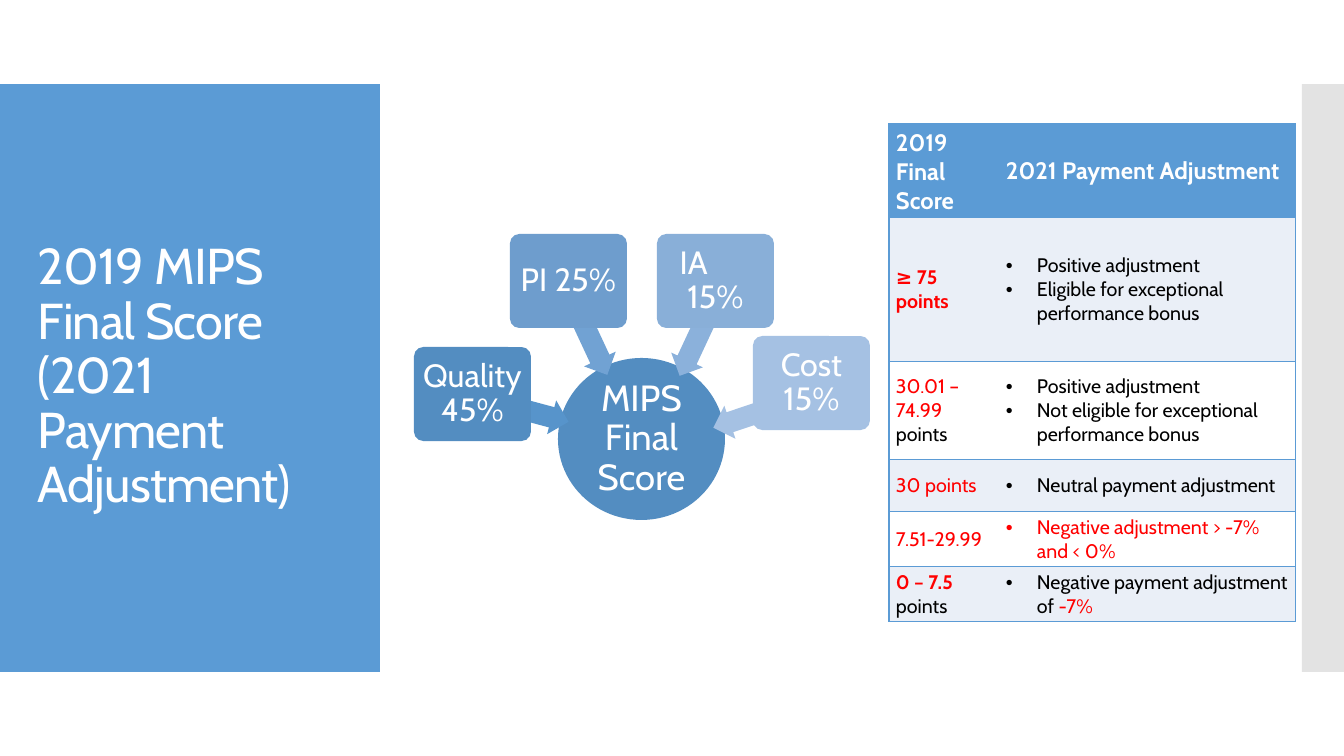
from dataclasses import dataclass
from typing import NamedTuple

from lxml.etree import SubElement
from pptx import Presentation
from pptx.dml.color import RGBColor
from pptx.enum.shapes import MSO_SHAPE
from pptx.enum.text import MSO_ANCHOR, PP_ALIGN
from pptx.oxml.ns import qn
from pptx.util import Emu, Pt

BLUE, WHITE, BLACK, RED, BAND = "5B9BD5", "FFFFFF", "000000", "FF0000", "EAEFF7"
FONT = "Cabin"


class Box(NamedTuple):
    x: int
    y: int
    w: int
    h: int


class Run(NamedTuple):
    text: str
    color: str = BLACK
    bold: bool = False


@dataclass(frozen=True)
class Para:
    runs: tuple[Run, ...]
    align: PP_ALIGN = PP_ALIGN.LEFT
    left: int = 0
    bullet: bool = False


@dataclass(frozen=True)
class Card:
    paras: tuple[Para, ...]
    x: int
    y: int
    color: str
    arrow: Box
    angle: float
    arrow_color: str


@dataclass(frozen=True)
class Row:
    height: int
    fill: str
    score: tuple[Para, ...]
    adjustment: tuple[Para, ...]
    size: int = 14


def px(n: int) -> Emu:
    return Emu(round(n * 914400 / 100.8))


def rgb(color: str) -> RGBColor:
    return RGBColor.from_string(color)


def line(text: str, color: str = BLACK, bold: bool = False, **fmt) -> Para:
    return Para((Run(text, color, bold),), **fmt)


def centred(text: str) -> Para:
    return line(text, WHITE, align=PP_ALIGN.CENTER)


def bullet(*runs: Run) -> Para:
    return Para(runs, left=31, bullet=True)


def write(tf, paras: tuple[Para, ...], *, size: int, spacing: float = 1.0,
          inset: tuple[int, int] | None = None, tracking: int = 0) -> None:
    tf.word_wrap = True
    tf.vertical_anchor = MSO_ANCHOR.MIDDLE
    if inset:
        tf.margin_left = tf.margin_right = px(inset[0])
        tf.margin_top = tf.margin_bottom = px(inset[1])
    for i, para in enumerate(paras):
        p = tf.paragraphs[0] if i == 0 else tf.add_paragraph()
        p.alignment = para.align
        p.line_spacing = spacing
        pPr = p._p.get_or_add_pPr()
        if para.left:
            pPr.set("marL", str(px(para.left)))
        if para.bullet:
            pPr.set("indent", str(-px(para.left)))
            SubElement(pPr, qn("a:buFont"), typeface="Arial")
            SubElement(pPr, qn("a:buChar"), char="•")
        for run in para.runs:
            r = p.add_run()
            r.text = run.text
            r.font.name = FONT
            r.font.size = Pt(size)
            r.font.bold = run.bold
            r.font.color.rgb = rgb(run.color)
            if tracking:
                r._r.get_or_add_rPr().set("spc", str(tracking))


def add_shape(s, kind: MSO_SHAPE, box: Box, color: str, *, adj: tuple[float, ...] = (),
              angle: float = 0, alpha: int = 100):
    sp = s.shapes.add_shape(kind, *map(px, box))
    sp.shadow.inherit = False
    sp.fill.solid()
    sp.fill.fore_color.rgb = rgb(color)
    sp.line.fill.background()
    sp.rotation = angle
    for i, value in enumerate(adj):
        sp.adjustments[i] = value
    if alpha < 100:
        clr = sp._element.spPr.find(qn("a:solidFill"))[0]
        SubElement(clr, qn("a:alpha"), val=str(alpha * 1000))
    return sp


def add_card(s, card: Card) -> None:
    add_shape(s, MSO_SHAPE.LEFT_ARROW, card.arrow, card.arrow_color,
              adj=(0.6, 0.5), angle=card.angle)
    sp = add_shape(s, MSO_SHAPE.ROUNDED_RECTANGLE, Box(card.x, card.y, 117, 94),
                   card.color, adj=(0.1,))
    write(sp.text_frame, card.paras, size=23, spacing=0.9, inset=(5, 5))


def set_borders(cell, edges: str) -> None:
    tcPr = cell._tc.get_or_add_tcPr()
    for edge in "LRTB":
        ln = SubElement(tcPr, qn(f"a:ln{edge}"), w=str(Pt(1)))
        if edge in edges:
            SubElement(SubElement(ln, qn("a:solidFill")), qn("a:srgbClr"), val=BLUE)
        else:
            SubElement(ln, qn("a:noFill"))


def add_score_table(s, x: int, y: int, widths: tuple[int, ...], rows: tuple[Row, ...]) -> None:
    box = Box(x, y, sum(widths), sum(row.height for row in rows))
    tbl = s.shapes.add_table(len(rows), len(widths), *map(px, box)).table
    tbl.horz_banding = False
    for col, width in zip(tbl.columns, widths):
        col.width = px(width)
    for i, row in enumerate(rows):
        tbl.rows[i].height = px(row.height)
        for j, (paras, edges) in enumerate(((row.score, "LTB"), (row.adjustment, "RTB"))):
            cell = tbl.cell(i, j)
            set_borders(cell, edges)
            cell.fill.solid()
            cell.fill.fore_color.rgb = rgb(row.fill)
            cell.vertical_anchor = MSO_ANCHOR.MIDDLE
            cell.margin_left = cell.margin_right = px(7)
            cell.margin_top = cell.margin_bottom = px(4)
            write(cell.text_frame, paras, size=row.size)


CARDS = (
    Card((centred("Quality 45%"),), 414, 347, "538DC1", Box(483, 393, 87, 35), 195, "5794CB"),
    Card((centred("PI 25%"),), 510, 234, "6E9DCD", Box(544, 317, 89, 35), 245, "71A2D3"),
    Card((line("IA", WHITE, left=15), centred("15%")), 657, 234, "89AFD8",
         Box(654, 318, 89, 35), 295, "8BB1DB"),
    Card((centred("Cost 15%"),), 753, 336, "A5C1E3", Box(711, 396, 90, 35), 341.5, "A5C1E3"),
)

ROWS = (
    Row(90, BLUE, (line("2019 Final", WHITE, True), line("Score", WHITE, True)),
        (line("2021 Payment Adjustment", WHITE, True),), size=17),
    Row(144, BAND, (line("≥ 75 points", RED, True),),
        (bullet(Run("Positive adjustment")),
         bullet(Run("Eligible for exceptional performance bonus")))),
    Row(98, WHITE, (Para((Run("30.01 – 74.99 ", RED), Run("points"))),),
        (bullet(Run("Positive adjustment")),
         bullet(Run("Not eligible for exceptional performance bonus")))),
    Row(52, BAND, (line("30 points", RED),), (bullet(Run("Neutral payment adjustment")),)),
    Row(52, WHITE, (line("7.51-29.99", RED),),
        (bullet(Run("Negative adjustment > -7% and < 0%", RED)),)),
    Row(52, BAND, (Para((Run("0 – 7.5", RED, True), Run(" points"))),),
        (bullet(Run("Negative payment adjustment of "), Run("-7%", RED)),)),
)


def main() -> None:
    prs = Presentation()
    prs.slide_width, prs.slide_height = px(1344), px(756)
    s = prs.slides.add_slide(prs.slide_layouts[6])
    add_shape(s, MSO_SHAPE.RECTANGLE, Box(0, 84, 380, 588), BLUE)
    add_shape(s, MSO_SHAPE.RECTANGLE, Box(1302, 84, 42, 588), "C8C8C8", alpha=50)
    title = s.shapes.add_textbox(*map(px, Box(28, 124, 325, 507)))
    write(title.text_frame, (line("2019 MIPS Final Score (2021 Payment Adjustment)", WHITE),),
          size=36, spacing=0.9, tracking=-60)
    hub = add_shape(s, MSO_SHAPE.OVAL, Box(558, 358, 167, 162), "538DC1")
    write(hub.text_frame, (centred("MIPS Final Score"),), size=26, spacing=0.9, inset=(2, 2))
    for card in CARDS:
        add_card(s, card)
    add_score_table(s, 889, 124, (110, 297), ROWS)
    prs.save("out.pptx")


if __name__ == "__main__":
    main()
